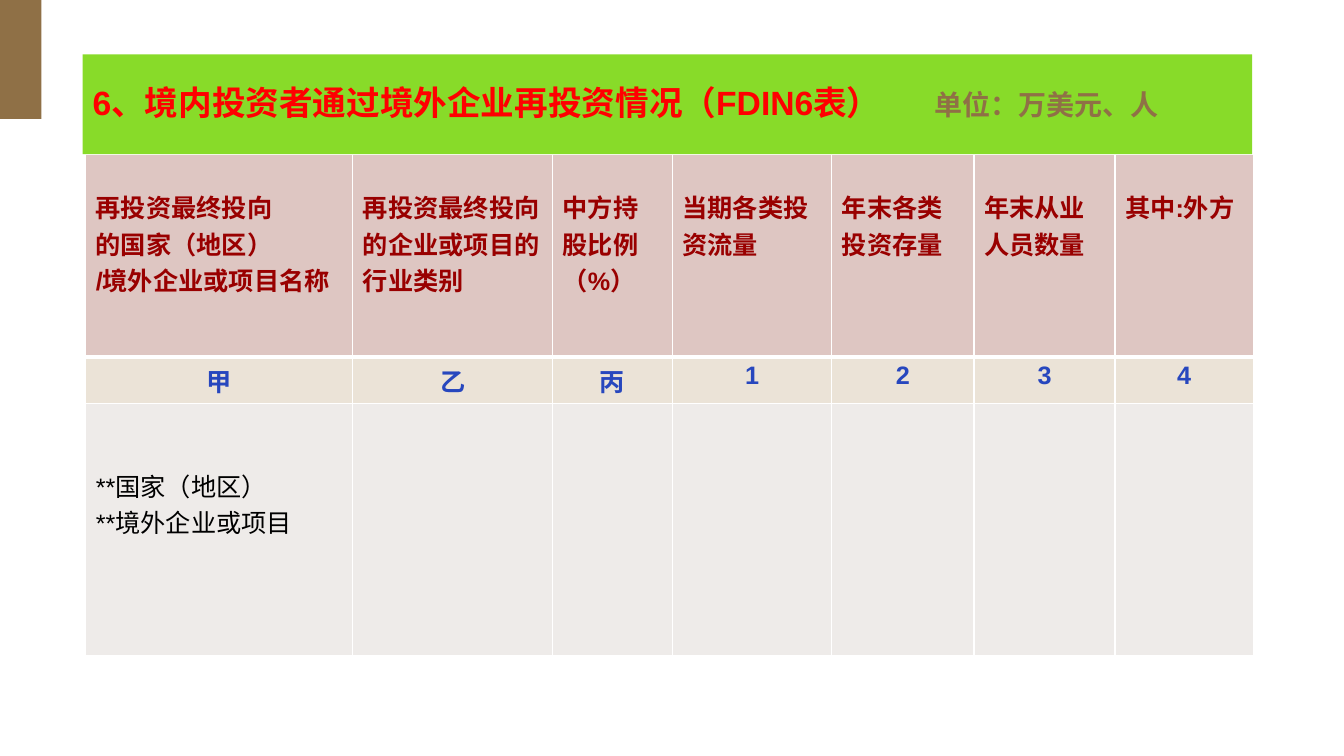
from dataclasses import dataclass

from lxml import etree
from pptx import Presentation
from pptx.dml.color import RGBColor
from pptx.enum.shapes import MSO_SHAPE
from pptx.enum.text import MSO_ANCHOR, PP_ALIGN
from pptx.oxml.ns import qn
from pptx.util import Inches, Pt

RECTANGLE = MSO_SHAPE.RECTANGLE
MIDDLE = MSO_ANCHOR.MIDDLE
LEFT, CENTER = PP_ALIGN.LEFT, PP_ALIGN.CENTER


@dataclass(frozen=True)
class Theme:
    """Colours, font and type sizes of the slide."""
    font: str = "Arial"
    brown: str = "8F7046"
    green: str = "88DB29"
    red: str = "FF0000"
    dark_red: str = "990000"
    blue: str = "2747BE"
    black: str = "000000"
    white: str = "FFFFFF"
    header_fill: str = "DEC6C2"
    code_fill: str = "EBE3D7"
    entry_fill: str = "EEEBE9"
    title_size: int = 24
    unit_size: int = 20
    table_size: int = 18


THEME = Theme()
COLUMN_WIDTHS = (2.65, 1.98, 1.19, 1.58, 1.41, 1.4, 1.37)
HEADINGS = (
    "再投资最终投向\n的国家（地区）\n/境外企业或项目名称",
    "再投资最终投向的企业或项目的行业类别",
    "中方持股比例（%）",
    "当期各类投资流量",
    "年末各类投资存量",
    "年末从业人员数量",
    "其中:外方",
)
CODES = ("甲", "乙", "丙", "1", "2", "3", "4")
ENTRIES = ("**国家（地区）\n**境外企业或项目",) + ("",) * 6


@dataclass(frozen=True)
class RowStyle:
    """Look of one table row."""
    height: float
    fill: str
    color: str
    bold: bool
    align: PP_ALIGN
    margin_top: float
    rule_above: int
    rule_below: int


ROWS = (
    (HEADINGS, RowStyle(2.01, THEME.header_fill, THEME.dark_red, True, LEFT, 0.34, 1, 3)),
    (CODES, RowStyle(0.46, THEME.code_fill, THEME.blue, True, CENTER, 0.05, 3, 1)),
    (ENTRIES, RowStyle(2.5, THEME.entry_fill, THEME.black, False, LEFT, 0.63, 1, 1)),
)


def write(paragraph, text, *, size, color, bold=True):
    """Add a formatted run to a paragraph."""
    run = paragraph.add_run()
    run.text = text
    run.font.name = THEME.font
    run.font.size = Pt(size)
    run.font.bold = bold
    run.font.color.rgb = RGBColor.from_string(color)


def add_block(slide, left, top, width, height, color):
    """Add a plain coloured rectangle."""
    block = slide.shapes.add_shape(
        RECTANGLE, Inches(left), Inches(top), Inches(width), Inches(height))
    block.shadow.inherit = False
    block.fill.solid()
    block.fill.fore_color.rgb = RGBColor.from_string(color)
    block.line.fill.background()
    return block


def add_tab_stop(paragraph, position):
    """Set a left tab stop on a paragraph."""
    stops = etree.SubElement(paragraph._p.get_or_add_pPr(), qn("a:tabLst"))
    etree.SubElement(stops, qn("a:tab"), pos=str(Inches(position)), algn="l")


def add_title(slide):
    """Add the green title band with the unit note."""
    band = add_block(slide, 0.82, 0.54, 11.6, 0.99, THEME.green)
    frame = band.text_frame
    frame.word_wrap = True
    frame.vertical_anchor = MIDDLE
    heading = frame.paragraphs[0]
    heading.alignment = LEFT
    heading.line_spacing = 0.9
    add_tab_stop(heading, 8.35)
    write(heading, "6、境内投资者通过境外企业再投资情况（FDIN6表）\t",
          size=THEME.title_size, color=THEME.red)
    write(heading, "单位：万美元、人", size=THEME.unit_size, color=THEME.brown)


def set_borders(cell, above, below):
    """Draw white rules on all four sides of a cell."""
    properties = cell._tc.get_or_add_tcPr()
    sides = (("L", 1), ("R", 1), ("T", above), ("B", below))
    for position, (side, width) in enumerate(sides):
        rule = etree.Element(qn(f"a:ln{side}"), w=str(Pt(width)))
        fill = etree.SubElement(rule, qn("a:solidFill"))
        etree.SubElement(fill, qn("a:srgbClr"), val=THEME.white)
        properties.insert(position, rule)


def fill_cell(cell, text, style):
    """Apply a row style to a cell and write its lines."""
    cell.fill.solid()
    cell.fill.fore_color.rgb = RGBColor.from_string(style.fill)
    cell.margin_top = Inches(style.margin_top)
    set_borders(cell, style.rule_above, style.rule_below)
    frame = cell.text_frame
    for index, line in enumerate(text.splitlines()):
        paragraph = frame.add_paragraph() if index else frame.paragraphs[0]
        paragraph.alignment = style.align
        write(paragraph, line, size=THEME.table_size, color=style.color, bold=style.bold)


def add_investment_table(slide):
    """Add the reinvestment table."""
    height = sum(style.height for _, style in ROWS)
    table = slide.shapes.add_table(
        len(ROWS), len(COLUMN_WIDTHS), Inches(0.85), Inches(1.53),
        Inches(sum(COLUMN_WIDTHS)), Inches(height)).table
    table.horz_banding = False
    for column, width in zip(table.columns, COLUMN_WIDTHS):
        column.width = Inches(width)
    for row, (texts, style) in zip(table.rows, ROWS):
        row.height = Inches(style.height)
        for cell, text in zip(row.cells, texts):
            fill_cell(cell, text, style)


def main():
    """Build and save the slide."""
    deck = Presentation()
    deck.slide_width, deck.slide_height = Inches(13.33), Inches(7.5)
    slide = deck.slides.add_slide(deck.slide_layouts[6])
    add_block(slide, -0.01, 0, 0.42, 1.18, THEME.brown)
    add_investment_table(slide)
    add_title(slide)
    deck.save("out.pptx")


if __name__ == "__main__":
    main()
